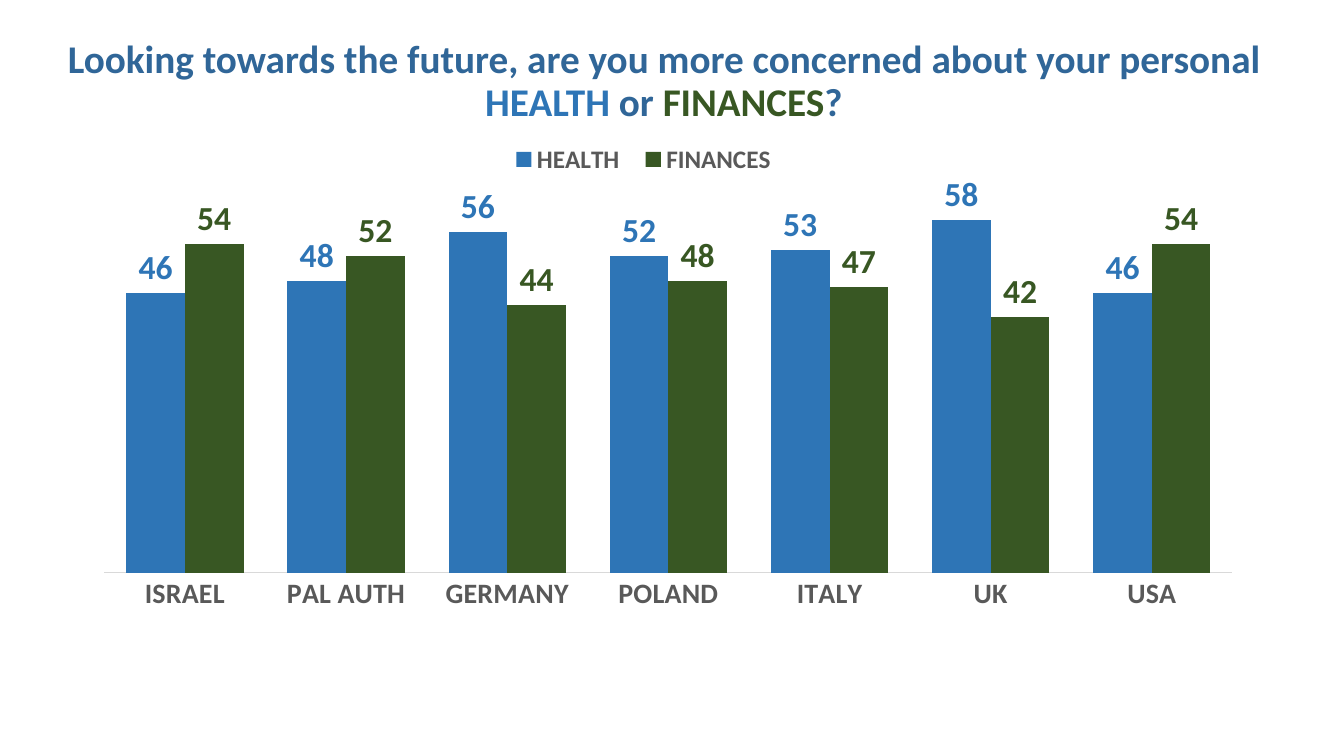
from dataclasses import dataclass

from lxml.etree import SubElement
from pptx import Presentation
from pptx.chart.data import CategoryChartData
from pptx.dml.color import RGBColor
from pptx.enum.chart import XL_CHART_TYPE, XL_LABEL_POSITION, XL_LEGEND_POSITION, XL_TICK_MARK
from pptx.enum.text import MSO_ANCHOR, MSO_AUTO_SIZE, PP_ALIGN
from pptx.oxml.ns import qn
from pptx.util import Inches, Pt

FONT = "Calibri"
TITLE_BLUE = RGBColor(0x30, 0x66, 0x98)
HEALTH_BLUE = RGBColor(0x2E, 0x75, 0xB6)
FINANCES_GREEN = RGBColor(0x38, 0x57, 0x23)
LABEL_GREY = RGBColor(0x59, 0x59, 0x59)
AXIS_GREY = RGBColor(0xD9, 0xD9, 0xD9)


@dataclass(frozen=True)
class Concern:
    name: str
    percentages: tuple[int, ...]
    color: RGBColor


@dataclass(frozen=True)
class Area:
    """Place inside the chart, as fractions of its size."""
    x: float
    y: float
    w: float
    h: float


COUNTRIES = ("ISRAEL", "PAL AUTH", "GERMANY", "POLAND", "ITALY", "UK", "USA")
HEALTH = Concern("HEALTH", (46, 48, 56, 52, 53, 58, 46), HEALTH_BLUE)
FINANCES = Concern("FINANCES", (54, 52, 44, 48, 47, 42, 54), FINANCES_GREEN)
CONCERNS = (HEALTH, FINANCES)
QUESTION = (
    ("Looking towards the future, are you more concerned about your personal ", TITLE_BLUE),
    (HEALTH.name, HEALTH.color),
    (" or ", TITLE_BLUE),
    (FINANCES.name, FINANCES.color),
    ("?", TITLE_BLUE),
)
PLOT_AREA = Area(0.01, 0.062, 0.973, 0.778)
LEGEND_AREA = Area(0.35, 0.05, 0.25, 0.07)


def style_font(font, size: float, color: RGBColor) -> None:
    font.name = FONT
    font.size = Pt(size)
    font.bold = True
    font.color.rgb = color


def set_layout(parent, index: int, area: Area, inner: bool = False) -> None:
    """Fix the plot or the legend at a place in the chart."""
    for old_layout in parent.findall(qn("c:layout")):
        parent.remove(old_layout)
    layout = SubElement(parent, qn("c:layout"))
    parent.insert(index, layout)
    manual = SubElement(layout, qn("c:manualLayout"))
    settings = [("layoutTarget", "inner")] if inner else []
    settings += [("xMode", "edge"), ("yMode", "edge")]
    settings += [(side, str(getattr(area, side))) for side in ("x", "y", "w", "h")]
    for tag, value in settings:
        SubElement(manual, qn(f"c:{tag}")).set("val", value)


def add_question(slide) -> None:
    title = slide.shapes.title
    title.left, title.top = Inches(0.51), Inches(0.25)
    title.width, title.height = Inches(12.15), Inches(1.13)
    frame = title.text_frame
    frame.word_wrap = True
    frame.auto_size = MSO_AUTO_SIZE.NONE
    frame.vertical_anchor = MSO_ANCHOR.MIDDLE
    paragraph = frame.paragraphs[0]
    paragraph.alignment = PP_ALIGN.CENTER
    paragraph.line_spacing = 0.9
    for text, color in QUESTION:
        run = paragraph.add_run()
        run.text = text
        style_font(run.font, 28, color)


def add_concern_chart(slide) -> None:
    data = CategoryChartData(number_format="0")
    data.categories = COUNTRIES
    for concern in CONCERNS:
        data.add_series(concern.name, concern.percentages)
    chart = slide.shapes.add_chart(
        XL_CHART_TYPE.COLUMN_CLUSTERED,
        Inches(0.92), Inches(1.12), Inches(11.5), Inches(5.43), data,
    ).chart
    chart.has_title = False
    chart.font.name = FONT
    chart.font.size = Pt(10)

    # Columns and their values
    plot = chart.plots[0]
    plot.gap_width = 75
    plot.overlap = 0
    plot.vary_by_categories = False
    for series, concern in zip(plot.series, CONCERNS):
        series.format.fill.solid()
        series.format.fill.fore_color.rgb = concern.color
        labels = series.data_labels
        labels.show_value = True
        labels.position = XL_LABEL_POSITION.OUTSIDE_END
        style_font(labels.font, 24, concern.color)

    # Axes
    countries = chart.category_axis
    countries.major_tick_mark = XL_TICK_MARK.NONE
    countries.format.line.color.rgb = AXIS_GREY
    countries.format.line.width = Pt(0.75)
    style_font(countries.tick_labels.font, 20, LABEL_GREY)
    percentages = chart.value_axis
    percentages.minimum_scale, percentages.maximum_scale = 0, 70
    percentages.has_major_gridlines = False
    percentages.visible = False

    # Legend above the columns
    chart.has_legend = True
    legend = chart.legend
    legend.position = XL_LEGEND_POSITION.BOTTOM
    legend.include_in_layout = False
    style_font(legend.font, 18, LABEL_GREY)
    set_layout(legend._element, 1, LEGEND_AREA)
    set_layout(plot._element.getparent(), 0, PLOT_AREA, inner=True)


def main() -> None:
    presentation = Presentation()
    presentation.slide_width = Inches(13.33)
    presentation.slide_height = Inches(7.5)
    slide = presentation.slides.add_slide(presentation.slide_layouts[5])
    add_question(slide)
    add_concern_chart(slide)
    presentation.save("out.pptx")


if __name__ == "__main__":
    main()
